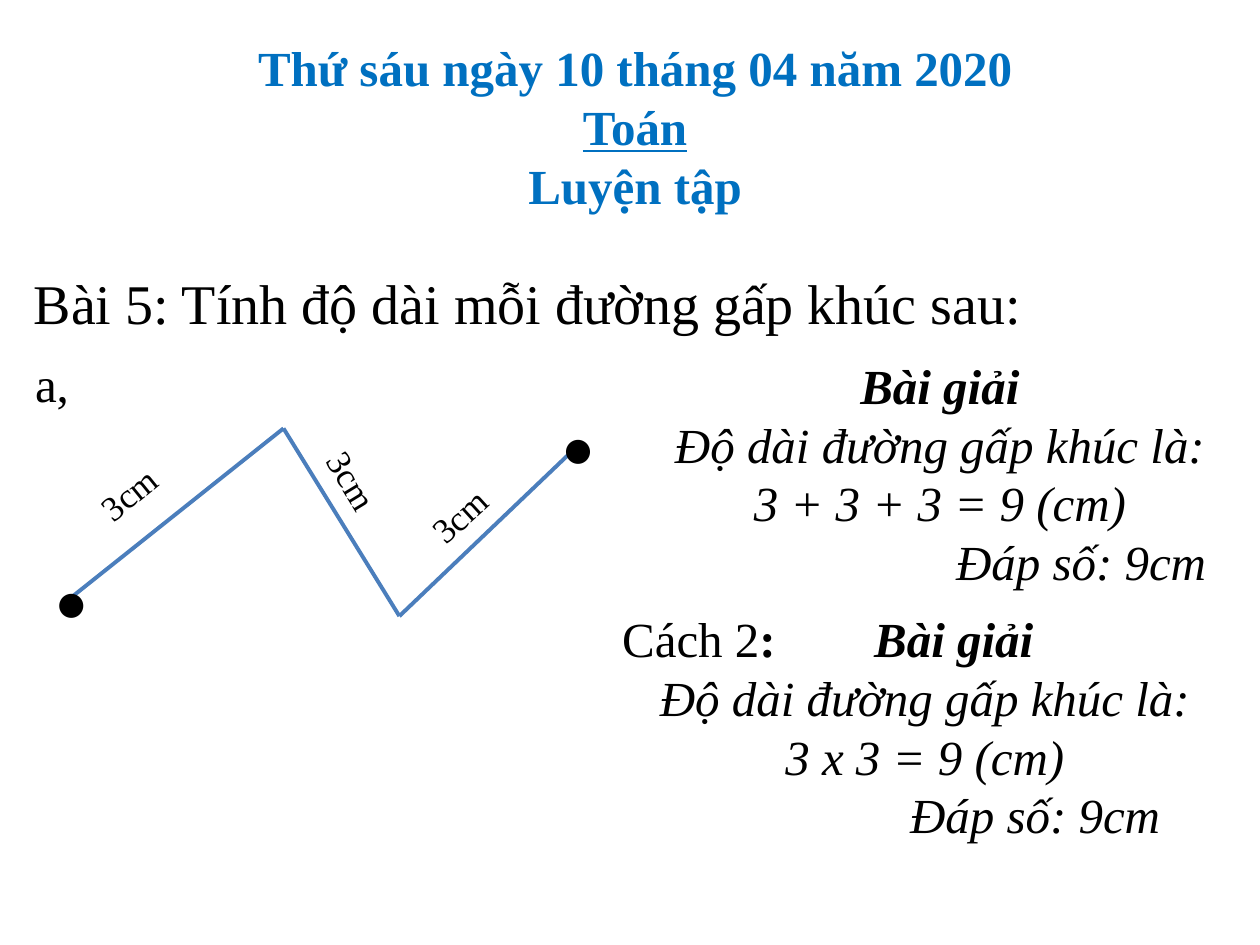
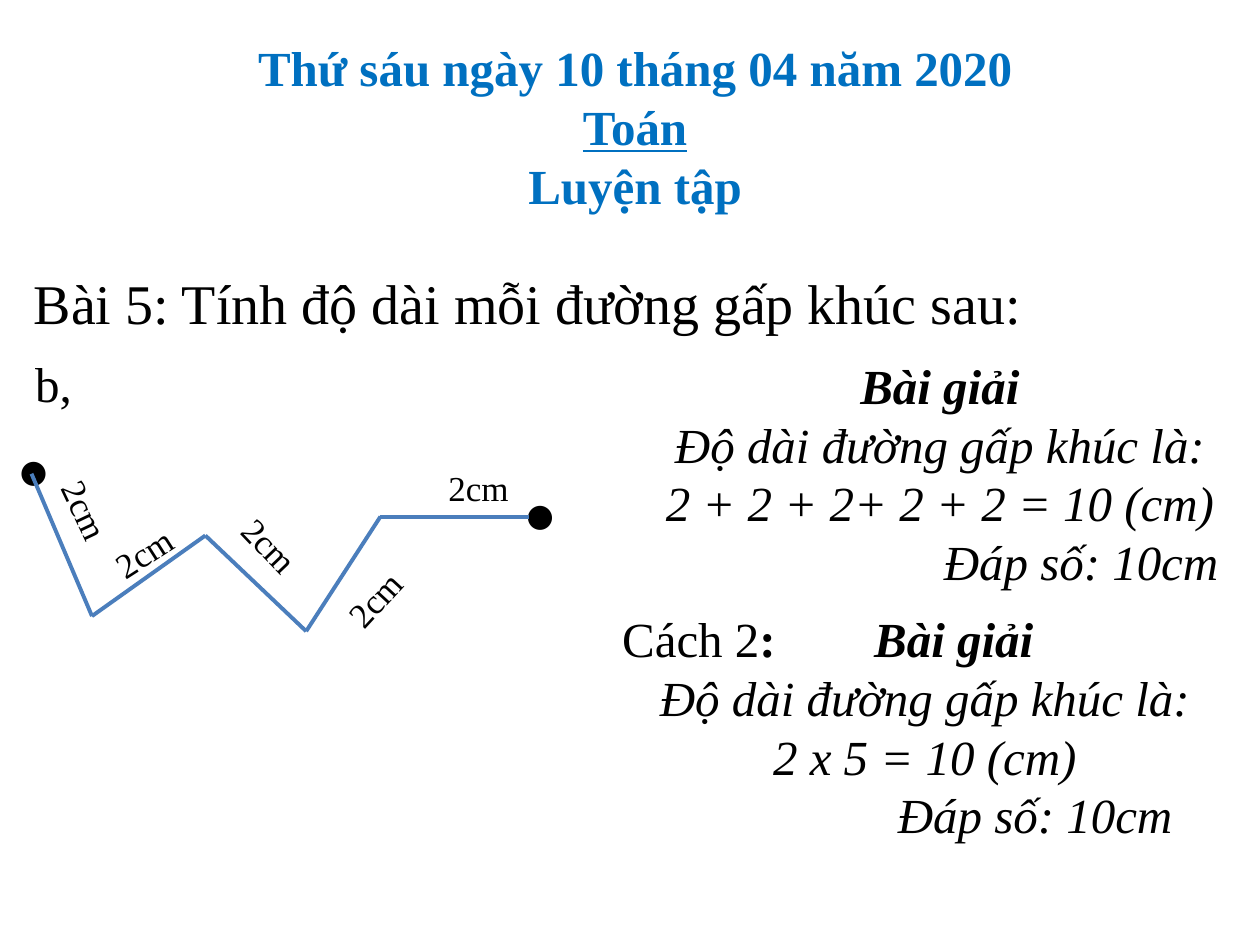
import itertools
from dataclasses import dataclass

import pptx
import pptx.dml.color
import pptx.enum.shapes
import pptx.enum.text
import pptx.oxml
import pptx.oxml.ns
import pptx.util
from pptx.util import Inches

CENTER = pptx.enum.text.PP_ALIGN.CENTER


@dataclass(frozen=True)
class Theme:
    font: str = "Times New Roman"
    dot_font: str = "DejaVu Sans"
    title: str = "0070C0"
    ink: str = "000000"
    segment: str = "4B7EBC"
    task_size: int = 32
    body_size: int = 28
    label_size: int = 20
    dot_size: int = 18
    segment_width: float = 2.25


@dataclass(frozen=True)
class Label:
    left: float
    top: float
    rotation: float = 0
    width: float = 0.95


@dataclass(frozen=True)
class Exercise:
    letter: str
    length: str
    total: str
    addition: str
    multiplication: str
    vertices: list[tuple[float, float]]
    dots: list[tuple[float, float]]
    labels: list[Label]
    dots_in_front: bool


THEME = Theme()

EXERCISES = [
    Exercise(
        "a,", "3cm", "9cm", "3 + 3 + 3 = 9 (cm)", "3 x 3 = 9 (cm)",
        vertices=[(0.58, 4.73), (2.25, 3.4), (3.17, 4.89), (4.51, 3.61)],
        dots=[(0.36, 4.58), (4.38, 3.36)],
        labels=[Label(0.65, 3.61, 320.8), Label(3.27, 3.78, 317.6),
                Label(2.42, 3.66, 58.6, 0.83)],
        dots_in_front=True,
    ),
    Exercise(
        "b,", "2cm", "10cm", "2 + 2 + 2+ 2 + 2 = 10 (cm)", "2 x 5 = 10 (cm)",
        vertices=[(0.25, 3.76), (0.73, 4.89), (1.63, 4.25), (2.43, 5.01),
                  (3.02, 4.1), (4.2, 4.1)],
        dots=[(0.06, 3.53), (4.08, 3.88)],
        labels=[Label(0.26, 3.95, 64.7), Label(0.78, 4.09, 327.2),
                Label(1.76, 4.21, 46.5), Label(2.61, 4.48, 312.7, 0.83),
                Label(3.46, 3.65)],
        dots_in_front=False,
    ),
]


def style(r, size: int, color: str = THEME.ink, font: str = THEME.font,
          bold: bool = False, italic: bool = False) -> None:
    r.font.name = font
    r.font.size = pptx.util.Pt(size)
    r.font.bold = bold
    r.font.italic = italic
    r.font.color.rgb = pptx.dml.color.RGBColor.from_string(color)


def add_text(s, text: str, left: float, top: float, width: float, height: float,
             size: int, align=None, **look):
    """Add a wrapped text box; each line of text is one paragraph."""
    sp = s.shapes.add_textbox(Inches(left), Inches(top), Inches(width), Inches(height))
    tf = sp.text_frame
    tf.text = text
    tf.word_wrap = True
    tf.auto_size = pptx.enum.text.MSO_AUTO_SIZE.SHAPE_TO_FIT_TEXT
    for p in tf.paragraphs:
        p.alignment = align
        for r in p.runs:
            style(r, size, **look)
    return sp


def add_segment(s, start: tuple[float, float], end: tuple[float, float]) -> None:
    ln = s.shapes.add_connector(pptx.enum.shapes.MSO_CONNECTOR.STRAIGHT,
                                *(Inches(v) for v in start + end))
    ln.line.color.rgb = pptx.dml.color.RGBColor.from_string(THEME.segment)
    ln.line.width = pptx.util.Pt(THEME.segment_width)
    sp_pr = ln._element.spPr
    sp_pr.append(pptx.oxml.parse_xml(
        f"<a:effectLst {pptx.oxml.ns.nsdecls('a')}/>"))


def add_dots(s, dots: list[tuple[float, float]]) -> None:
    for left, top in dots:
        add_text(s, "●", left, top, 0.51, 0.4, THEME.dot_size, font=THEME.dot_font)


def add_broken_line(s, ex: Exercise) -> None:
    if not ex.dots_in_front:
        add_dots(s, ex.dots)
    for start, end in itertools.pairwise(ex.vertices):
        add_segment(s, start, end)
    if ex.dots_in_front:
        add_dots(s, ex.dots)
    for label in ex.labels:
        sp = add_text(s, ex.length, label.left, label.top, label.width, 0.44,
                      THEME.label_size)
        sp.rotation = label.rotation


def add_solution(s, ex: Exercise, sum_line: str, left: float, top: float,
                 answer_indent: float):
    """Add a worked solution and return its heading paragraph."""
    text = f"Bài giải\nĐộ dài đường gấp khúc là:\n{sum_line}\nĐáp số: {ex.total}"
    sp = add_text(s, text, left, top, 5, 1.99, THEME.body_size, CENTER, italic=True)
    heading, *_, answer = sp.text_frame.paragraphs
    heading.runs[0].font.bold = True
    answer._p.get_or_add_pPr().set("marL", str(Inches(answer_indent)))
    return heading


def add_second_way(s, ex: Exercise) -> None:
    p = add_solution(s, ex, ex.multiplication, 4.84, 4.78, 1.75)
    p.text = "Cách 2"
    p.alignment = pptx.enum.text.PP_ALIGN.LEFT
    style(p.runs[0], THEME.body_size)
    for text, italic in ((":\t", False), ("Bài giải", True)):
        r = p.add_run()
        r.text = text
        style(r, THEME.body_size, bold=True, italic=italic)
    # Tab stop that sets the heading apart from "Cách 2:"
    p._p.get_or_add_pPr().append(pptx.oxml.parse_xml(
        f"<a:tabLst {pptx.oxml.ns.nsdecls('a')}>"
        f'<a:tab pos="{Inches(2)}" algn="l"/></a:tabLst>'))


def add_header(s) -> None:
    sp = add_text(s, "Thứ sáu ngày 10 tháng 04 năm 2020\nToán\nLuyện tập",
                  1.5, 0.25, 7.08, 1.51, THEME.body_size, CENTER,
                  color=THEME.title, bold=True)
    sp.text_frame.paragraphs[1].runs[0].font.underline = True
    add_text(s, "Bài 5: Tính độ dài mỗi đường gấp khúc sau:",
             0.17, 2.08, 9.83, 0.64, THEME.task_size)


def main() -> None:
    prs = pptx.Presentation()
    prs.slide_width, prs.slide_height = Inches(10), Inches(7.5)
    for ex in EXERCISES:
        s = prs.slides.add_slide(prs.slide_layouts[6])
        add_header(s)
        add_text(s, ex.letter, 0.18, 2.76, 0.95, 0.57, THEME.body_size)
        add_broken_line(s, ex)
        add_solution(s, ex, ex.addition, 4.96, 2.77, 2.24)
        add_second_way(s, ex)
    prs.save("out.pptx")


if __name__ == "__main__":
    main()
